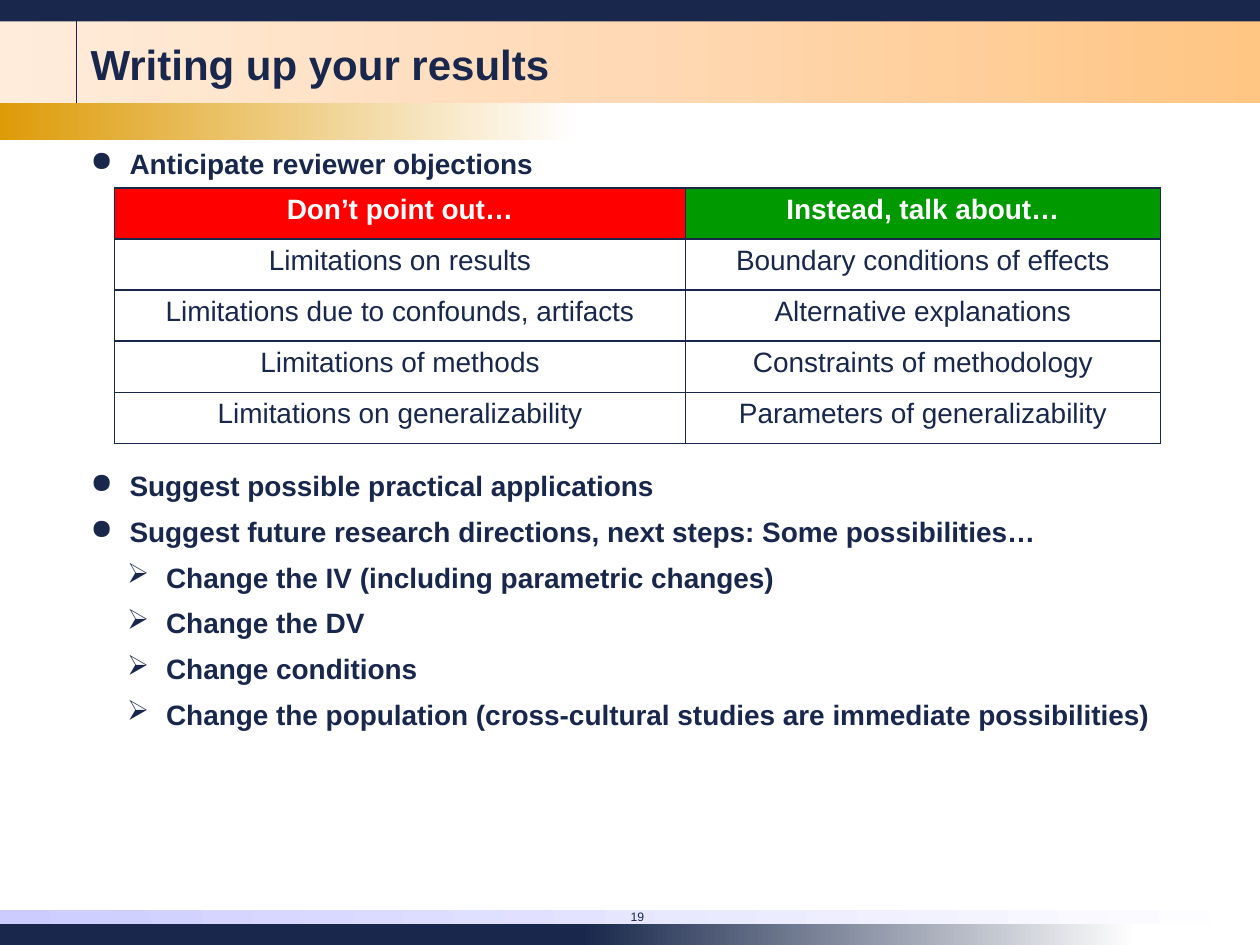
from copy import deepcopy

from lxml import etree
from pptx import Presentation
from pptx.dml.color import RGBColor
from pptx.enum import shapes, text
from pptx.oxml import ns
from pptx.util import Inches, Pt

NAVY, WHITE, RED, GREEN = "18274B", "FFFFFF", "FF0000", "009900"
FONT = "Arial"

ROWS = [
    ("Don’t point out…", "Instead, talk about…"),
    ("Limitations on results", "Boundary conditions of effects"),
    ("Limitations due to confounds, artifacts", "Alternative explanations"),
    ("Limitations of methods", "Constraints of methodology"),
    ("Limitations on generalizability", "Parameters of generalizability"),
]

# Text, level, space before, space after; the second point clears the table
POINTS = [
    ("Anticipate reviewer objections", 0, 0, 9),
    ("Suggest possible practical applications", 0, 156, 7),
    ("Suggest future research directions, next steps: Some possibilities…", 0, 0, 7),
    ("Change the IV (including parametric changes)", 1, 0, 7),
    ("Change the DV", 1, 0, 7),
    ("Change conditions", 1, 0, 7),
    ("Change the population (cross-cultural studies are immediate possibilities)", 1, 0, 7),
]
BULLETS = [("●", 0.31), ("➢", 0.6)]
HANGING = 0.31


def color(value):
    return RGBColor.from_string(value)


def write(paragraph, words, size=16, fill=NAVY, bold=False, align=None):
    run = paragraph.add_run()
    run.text = words
    run.font.name, run.font.size, run.font.bold = FONT, Pt(size), bold
    run.font.color.rgb = color(fill)
    if align is not None:
        paragraph.alignment = align


def add_frame(slide, box, wrap=True):
    frame = slide.shapes.add_textbox(*map(Inches, box)).text_frame
    frame.word_wrap = wrap
    return frame


def add_band(slide, box, *colors):
    """A borderless bar: one colour is solid, more run left to right."""
    band = slide.shapes.add_shape(shapes.MSO_SHAPE.RECTANGLE, *map(Inches, box))
    band.shadow.inherit = False
    band.line.fill.background()
    if len(colors) == 1:
        band.fill.solid()
        band.fill.fore_color.rgb = color(colors[0])
        return
    band.fill.gradient()
    band.fill.gradient_angle = 0
    stop_list = band.fill._fill._gradFill.find(ns.qn("a:gsLst"))
    for _ in colors[2:]:
        stop_list.append(deepcopy(stop_list[0]))
    for i, (stop, value) in enumerate(zip(band.fill.gradient_stops, colors)):
        stop.position = i / (len(colors) - 1)
        stop.color.rgb = color(value)


def add_header(slide, left, top, width):
    add_band(slide, (left, top, width, 0.82), "FFECDB", "FFD9B5", "FFC583")
    add_band(slide, (left, top - 0.03, width, 0.2), NAVY)
    rule_x = Inches(left + 0.61)
    rule = slide.shapes.add_connector(
        shapes.MSO_CONNECTOR.STRAIGHT, rule_x, Inches(top + 0.17), rule_x, Inches(top + 0.82))
    rule.line.color.rgb = color(NAVY)
    rule.line.width = Pt(0.75)
    etree.SubElement(rule._element.spPr, ns.qn("a:effectLst"))
    add_band(slide, (left, top + 0.82, 4.58, 0.29), "DD9B08", WHITE)
    title = add_frame(slide, (left + 0.62, top + 0.26, 3.88, 0.5), wrap=False)
    write(title.paragraphs[0], "Writing up your results", size=24, bold=True)


def add_footer(slide, left, top, width):
    add_band(slide, (left, top + 0.11, 8.69, 0.17), NAVY)
    add_band(slide, (left, top, width, 0.11), "CCCCFF", WHITE)
    add_band(slide, (left + 4.61, top + 0.11, 4.41, 0.17), NAVY, WHITE)
    number = add_frame(slide, (left + 4.79, top - 0.05, 0.42, 0.2))
    write(number.paragraphs[0], "19", size=7, align=text.PP_ALIGN.RIGHT)


def add_points(slide, box):
    frame = add_frame(slide, box)
    for i, (words, level, before, after) in enumerate(POINTS):
        point = frame.add_paragraph() if i else frame.paragraphs[0]
        mark, indent = BULLETS[level]
        point.level = level
        properties = point._p.get_or_add_pPr()
        properties.set("marL", str(Inches(indent)))
        properties.set("indent", str(-Inches(HANGING)))
        etree.SubElement(properties, ns.qn("a:buChar"), char=mark)
        if before:
            point.space_before = Pt(before)
        point.space_after = Pt(after)
        write(point, words, bold=True)


def set_borders(cell):
    properties = cell._tc.get_or_add_tcPr()
    for i, side in enumerate(("lnL", "lnR", "lnT", "lnB")):
        line = etree.Element(ns.qn("a:" + side), w=str(Pt(1)))
        fill = etree.SubElement(line, ns.qn("a:solidFill"))
        etree.SubElement(fill, ns.qn("a:srgbClr"), val=NAVY)
        properties.insert(i, line)


def add_comparison(slide, box):
    table = slide.shapes.add_table(len(ROWS), 2, *map(Inches, box)).table
    for column, width in zip(table.columns, (4.53, box[2] - 4.53)):
        column.width = Inches(width)
    for r, row in enumerate(ROWS):
        fills = (WHITE, WHITE) if r else (RED, GREEN)
        for c, words in enumerate(row):
            cell = table.cell(r, c)
            cell.fill.solid()
            cell.fill.fore_color.rgb = color(fills[c])
            set_borders(cell)
            write(cell.text_frame.paragraphs[0], words, fill=NAVY if r else WHITE,
                  bold=r == 0, align=text.PP_ALIGN.CENTER)


def main():
    deck = Presentation()
    deck.slide_width, deck.slide_height = Inches(10), Inches(7.5)
    slide = deck.slides.add_slide(deck.slide_layouts[6])
    add_header(slide, 0, 0, 10)
    add_footer(slide, 0, 7.22, 10)
    add_points(slide, (0.62, 1.11, 9.38, 4.79))
    add_comparison(slide, (0.91, 1.49, 8.3, 2.03))
    deck.save("out.pptx")


if __name__ == "__main__":
    main()
